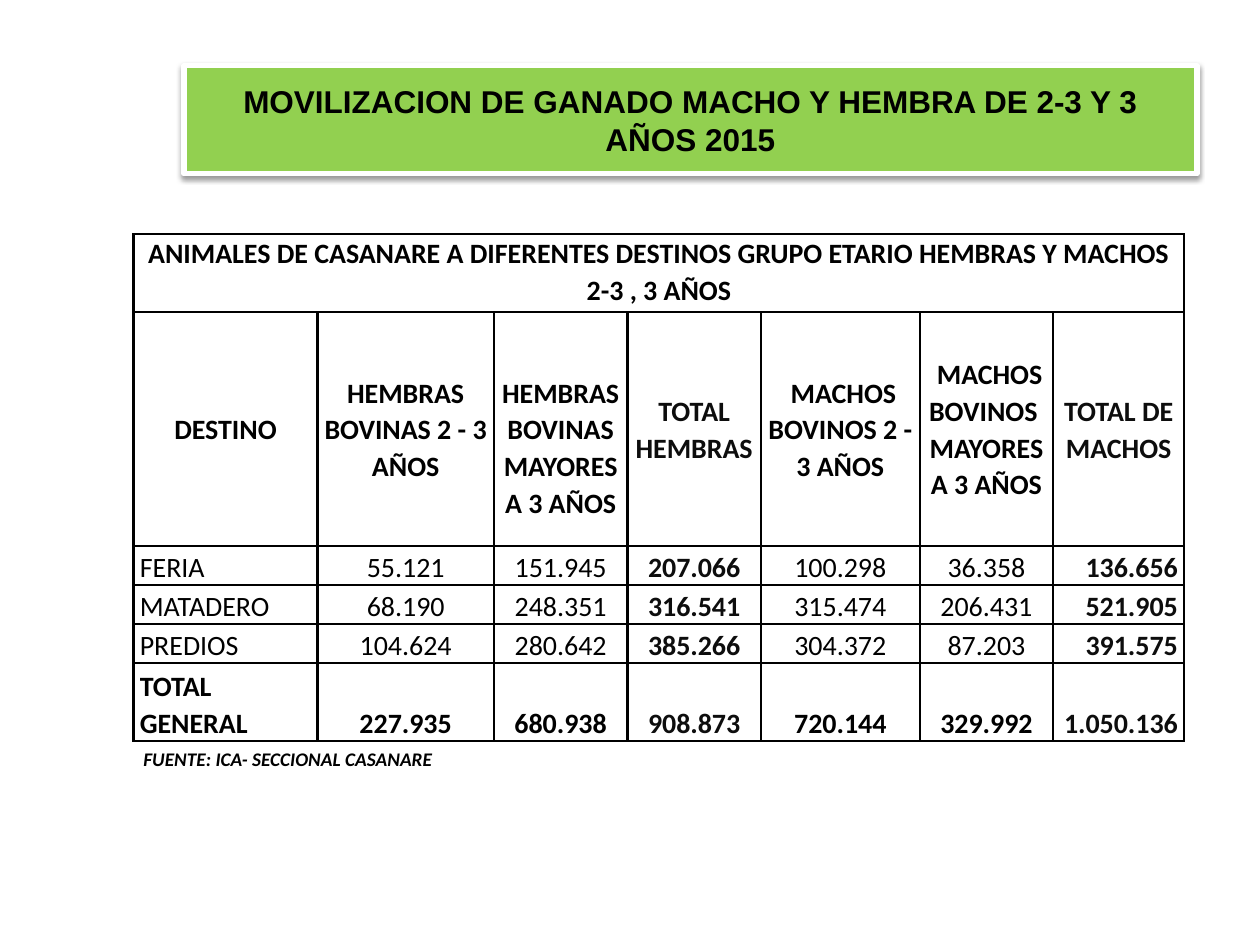
from dataclasses import dataclass

from lxml.etree import SubElement
from pptx import Presentation
from pptx.dml.color import RGBColor
from pptx.enum.shapes import MSO_SHAPE as Shape
from pptx.enum.text import MSO_ANCHOR as Anchor, MSO_AUTO_SIZE as AutoSize, PP_ALIGN as Align
from pptx.oxml.ns import qn
from pptx.util import Emu, Inches, Pt


@dataclass(frozen=True)
class Theme:
    black: str = "000000"
    soft_black: str = "0D0D0D"
    white: str = "FFFFFF"
    green: str = "92D050"
    title_font: str = "Arial"
    body_font: str = "Calibri"
    title_size: int = 18
    table_size: int = 16
    source_size: int = 11
    border: float = 1.5
    line_spacing: float = 1.07


@dataclass(frozen=True)
class Box:
    """A frame in percent of the slide's width and height."""
    left: float
    top: float
    width: float
    height: float


@dataclass(frozen=True)
class CellStyle:
    align: Align = Align.CENTER
    anchor: Anchor = Anchor.BOTTOM
    bold: bool = True
    color: str = Theme.black


THEME = Theme()
WIDTH, HEIGHT = Inches(10), Inches(7.5)

TITLE_BOX = Box(14.6, 6.93, 80.4, 11.47)
TABLE_BOX = Box(10.6, 24.8, 83.4, 53.6)
SOURCE_BOX = Box(10.4, 78.4, 25.3, 3.87)

COLUMN_SHARES = (14.6, 14, 10.6, 10.6, 12.6, 10.6, 10.4)
ROW_UNITS = (2, 6, 1, 1, 1, 2)
TOTAL_COLUMNS = (3, 6)

CAPTION = "ANIMALES DE CASANARE A DIFERENTES DESTINOS GRUPO ETARIO HEMBRAS Y MACHOS 2-3 , 3 AÑOS"
ROWS = (
    ("DESTINO", "HEMBRAS BOVINAS 2 - 3 AÑOS", " HEMBRAS BOVINAS MAYORES A 3 AÑOS", "TOTAL HEMBRAS",
     " MACHOS BOVINOS 2 - 3 AÑOS", " MACHOS BOVINOS  MAYORES A 3 AÑOS", "TOTAL DE MACHOS"),
    ("FERIA", "55.121", "151.945", "207.066", "100.298", "36.358", "136.656"),
    ("MATADERO", "68.190", "248.351", "316.541", "315.474", "206.431", "521.905"),
    ("PREDIOS", "104.624", "280.642", "385.266", "304.372", "87.203", "391.575"),
    ("TOTAL GENERAL", "227.935", "680.938", "908.873", "720.144", "329.992", "1.050.136"),
)


def across(share: float) -> Emu:
    return Emu(round(WIDTH * share / 100))


def down(share: float) -> Emu:
    return Emu(round(HEIGHT * share / 100))


def place(box: Box) -> tuple[Emu, Emu, Emu, Emu]:
    return across(box.left), down(box.top), across(box.width), down(box.height)


def write(frame, text: str, font: str, size: int, color: str = THEME.black,
          bold: bool = True, italic: bool = False, align: Align = Align.LEFT):
    para = frame.paragraphs[0]
    para.text = text
    para.alignment = align
    para.font.name, para.font.size = font, Pt(size)
    para.font.bold, para.font.italic = bold, italic
    para.font.color.rgb = RGBColor.from_string(color)
    return para


def add_shadow(shape) -> None:
    shape.shadow.inherit = False
    effects = shape._element.spPr.find(qn("a:effectLst"))
    shadow = SubElement(effects, qn("a:outerShdw"), blurRad=str(Pt(3.1)), dist=str(Pt(1.6)),
                        dir="5400000", rotWithShape="0")
    color = SubElement(shadow, qn("a:srgbClr"), val=THEME.black)
    SubElement(color, qn("a:alpha"), val="38000")


def add_borders(cell) -> None:
    properties = cell._tc.get_or_add_tcPr()
    for side in ("lnL", "lnR", "lnT", "lnB"):
        line = SubElement(properties, qn(f"a:{side}"), w=str(Pt(THEME.border)))
        fill = SubElement(line, qn("a:solidFill"))
        SubElement(fill, qn("a:srgbClr"), val=THEME.black)


def fill_cell(cell, text: str, style: CellStyle) -> None:
    cell.margin_left = cell.margin_right = Inches(0.05)
    cell.margin_top = cell.margin_bottom = 0
    cell.vertical_anchor = style.anchor
    para = write(cell.text_frame, text, THEME.body_font, THEME.table_size,
                 style.color, style.bold, align=style.align)
    para.line_spacing = THEME.line_spacing


def style_for(row: int, column: int) -> CellStyle:
    """Totals are bold; names sit left and the last figures right."""
    is_total = column in TOTAL_COLUMNS
    color = THEME.soft_black if is_total else THEME.black
    if row == 0:
        return CellStyle(anchor=Anchor.MIDDLE, color=color)
    align = {0: Align.LEFT, len(COLUMN_SHARES) - 1: Align.RIGHT}.get(column, Align.CENTER)
    return CellStyle(align, bold=is_total or row == len(ROWS) - 1, color=color)


def add_title(page) -> None:
    banner = page.shapes.add_shape(Shape.RECTANGLE, *place(TITLE_BOX))
    banner.fill.solid()
    banner.fill.fore_color.rgb = RGBColor.from_string(THEME.green)
    banner.line.color.rgb = RGBColor.from_string(THEME.white)
    banner.line.width = Pt(3)
    add_shadow(banner)
    banner.text_frame.word_wrap = True
    banner.text_frame.vertical_anchor = Anchor.MIDDLE
    write(banner.text_frame, "MOVILIZACION DE GANADO MACHO Y HEMBRA DE 2-3 Y 3 AÑOS 2015",
          THEME.title_font, THEME.title_size, align=Align.CENTER)


def add_cattle_table(page) -> None:
    table = page.shapes.add_table(len(ROW_UNITS), len(COLUMN_SHARES), *place(TABLE_BOX)).table
    table.first_row = table.horz_banding = False
    for column, share in zip(table.columns, COLUMN_SHARES):
        column.width = across(share)
    for row, units in zip(table.rows, ROW_UNITS):
        row.height = down(TABLE_BOX.height * units / sum(ROW_UNITS))
    for cell in table.iter_cells():
        add_borders(cell)
        cell.fill.background()

    # Caption over all columns, then headings and figures
    table.cell(0, 0).merge(table.cell(0, len(COLUMN_SHARES) - 1))
    fill_cell(table.cell(0, 0), CAPTION, CellStyle(anchor=Anchor.TOP))
    for row, texts in enumerate(ROWS):
        for column, text in enumerate(texts):
            fill_cell(table.cell(row + 1, column), text, style_for(row, column))


def add_source(page) -> None:
    frame = page.shapes.add_textbox(*place(SOURCE_BOX)).text_frame
    frame.word_wrap = False
    frame.auto_size = AutoSize.SHAPE_TO_FIT_TEXT
    write(frame, "FUENTE: ICA- SECCIONAL CASANARE", THEME.body_font, THEME.source_size, italic=True)


def main() -> None:
    deck = Presentation()
    deck.slide_width, deck.slide_height = WIDTH, HEIGHT
    page = deck.slides.add_slide(deck.slide_layouts[6])
    add_title(page)
    add_cattle_table(page)
    add_source(page)
    deck.save("out.pptx")


if __name__ == "__main__":
    main()
